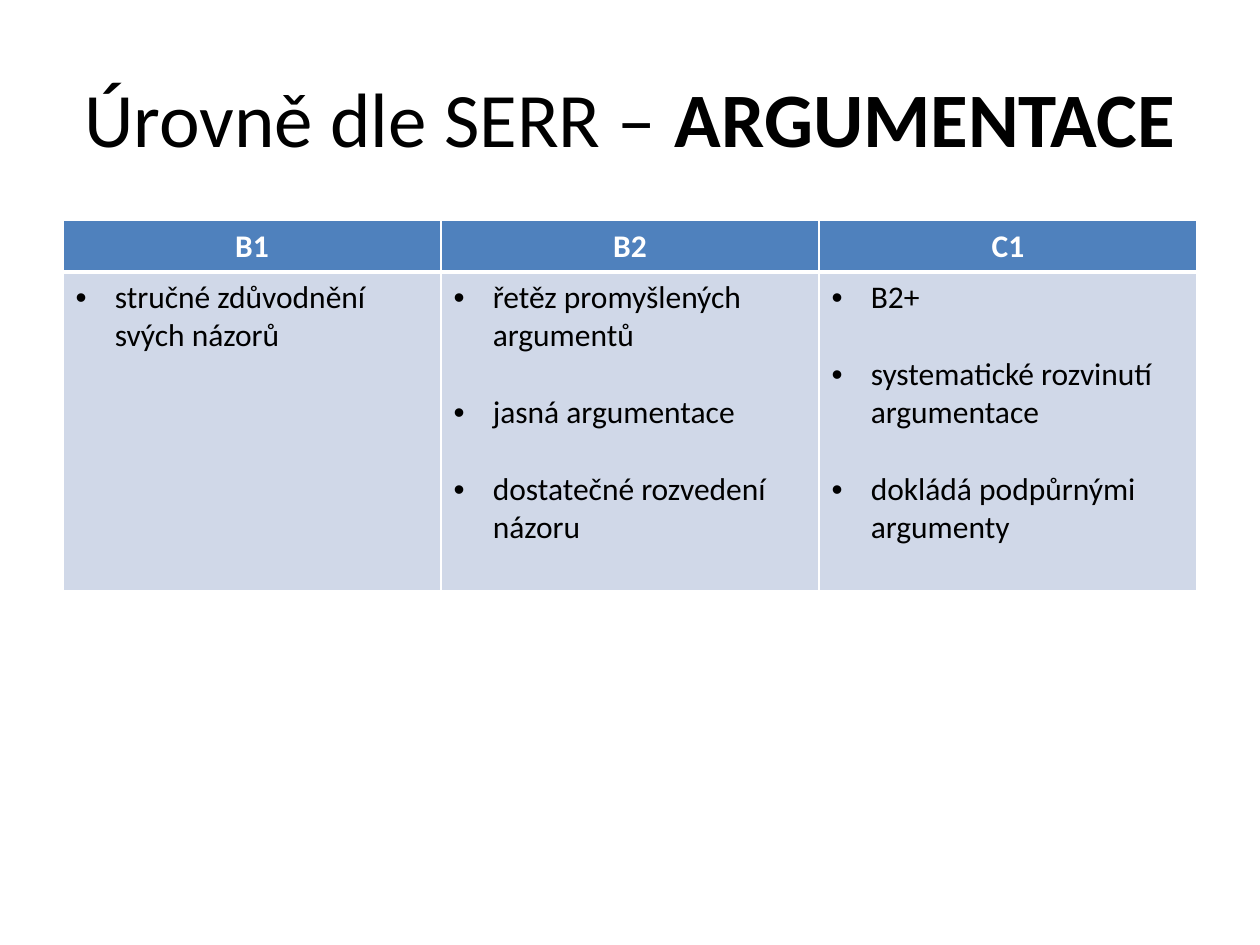
from dataclasses import dataclass
from typing import Any

from lxml import etree
from pptx import Presentation
from pptx.dml.color import RGBColor
from pptx.enum.text import MSO_ANCHOR, PP_ALIGN
from pptx.oxml.ns import qn
from pptx.util import Cm, Pt

CENTER = PP_ALIGN.CENTER
LEFT = PP_ALIGN.LEFT
MIDDLE = MSO_ANCHOR.MIDDLE

LEVELS = {
    "B1": ["stručné zdůvodnění svých názorů"],
    "B2": [
        "řetěz promyšlených argumentů",
        "jasná argumentace",
        "dostatečné rozvedení názoru",
    ],
    "C1": [
        "B2+",
        "systematické rozvinutí argumentace",
        "dokládá podpůrnými argumenty",
    ],
}


def rgb(value):
    return RGBColor.from_string(value)


def write(paragraph, text, *, font, size, color, bold=False, align=LEFT):
    paragraph.alignment = align
    run = paragraph.add_run()
    run.text = text
    run.font.name = font
    run.font.size = Pt(size)
    run.font.bold = bold
    run.font.color.rgb = rgb(color)


def add_bullet(paragraph, indent):
    properties = paragraph._p.get_or_add_pPr()
    properties.set("marL", str(indent))
    properties.set("indent", str(-indent))
    etree.SubElement(properties, qn("a:buFont"), typeface="Arial")
    etree.SubElement(properties, qn("a:buChar"), char="•")


def set_borders(cell, color, **widths):
    properties = cell._tc.get_or_add_tcPr()
    for position, side in enumerate("LRTB"):
        line = etree.Element(qn(f"a:ln{side}"), w=str(Pt(widths.get(side, 1))))
        fill = etree.SubElement(line, qn("a:solidFill"))
        etree.SubElement(fill, qn("a:srgbClr"), val=color)
        properties.insert(position, line)


@dataclass
class LevelSlide:
    slide: Any
    font: str = "Calibri"
    ink: str = "000000"
    paper: str = "FFFFFF"
    header_fill: str = "4F81BD"
    body_fill: str = "D0D8E8"
    title_size: int = 44
    table_size: int = 18

    def title(self, topic, emphasis, left, top, width, height):
        frame = self.slide.shapes.add_textbox(left, top, width, height).text_frame
        frame.word_wrap = True
        frame.vertical_anchor = MIDDLE
        for text, bold in ((topic, False), (emphasis, True)):
            write(frame.paragraphs[0], text, font=self.font, size=self.title_size,
                  color=self.ink, bold=bold, align=CENTER)

    def header_cell(self, cell, level):
        cell.fill.solid()
        cell.fill.fore_color.rgb = rgb(self.header_fill)
        set_borders(cell, self.paper, B=3)
        write(cell.text_frame.paragraphs[0], level, font=self.font,
              size=self.table_size, color=self.paper, bold=True, align=CENTER)

    def body_cell(self, cell, skills):
        cell.fill.solid()
        cell.fill.fore_color.rgb = rgb(self.body_fill)
        set_borders(cell, self.paper, T=3)
        frame = cell.text_frame
        for index, skill in enumerate(skills):
            paragraph = frame.add_paragraph() if index else frame.paragraphs[0]
            if index:
                paragraph.space_before = Pt(22)
            add_bullet(paragraph, Cm(0.79))
            write(paragraph, skill, font=self.font, size=self.table_size,
                  color=self.ink)

    def table(self, levels, left, top, width, row_heights):
        table = self.slide.shapes.add_table(
            len(row_heights), len(levels), left, top, width, sum(row_heights)
        ).table
        for row, height in zip(table.rows, row_heights):
            row.height = height
        for column, (level, skills) in enumerate(levels.items()):
            self.header_cell(table.cell(0, column), level)
            self.body_cell(table.cell(1, column), skills)


def main():
    deck = Presentation()
    deck.slide_width = Cm(25.4)
    deck.slide_height = Cm(19.05)
    page = LevelSlide(deck.slides.add_slide(deck.slide_layouts[6]))
    left, width = Cm(1.27), Cm(22.86)
    page.title("Úrovně dle SERR – ", "ARGUMENTACE", left, Cm(0.76), width, Cm(3.18))
    page.table(LEVELS, left, Cm(4.45), width, [Cm(1.03), Cm(6.43)])
    deck.save("out.pptx")


if __name__ == "__main__":
    main()
